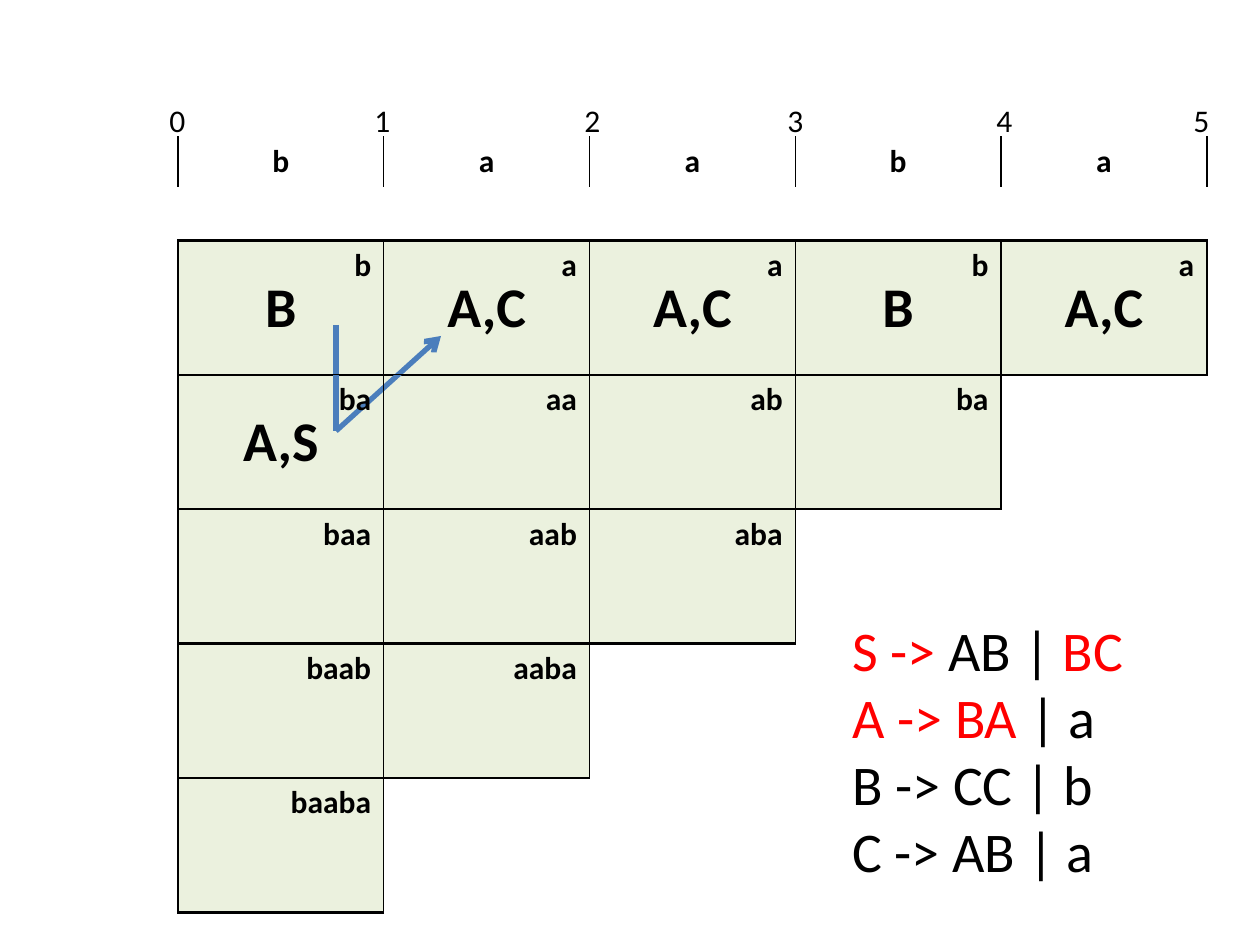
import pptx
import pptx.util
import pptx.dml.color
import pptx.enum.text
import pptx.enum.shapes
import pptx.oxml
import pptx.oxml.ns

ALIGN = pptx.enum.text.PP_ALIGN
ANCHOR = pptx.enum.text.MSO_ANCHOR
BLACK, RED, BLUE, GREEN, WHITE = "000000", "FF0000", "4B7EBC", "EBF1DE", "FFFFFF"
PLAIN = "{2D5ABB26-0587-4C30-8999-92F81FD0307C}"
SIZE = 5
WORD = "baaba"
FOUND = {(0, 0): "B", (0, 1): "A,C", (0, 2): "A,C", (0, 3): "B", (0, 4): "A,C", (1, 0): "A,S"}
STOPS = (205, 415, 618, 827, 1024)
RULES = (
    (("S ->", RED), (" AB | ", BLACK), ("BC", RED)),
    (("A -> BA", RED), (" | a", BLACK)),
    (("B -> CC | b", BLACK),),
    (("C -> AB | a", BLACK),),
)


def px(num):
    """Turn pixels into EMU."""
    return round(num * 914400 / 126)


def color(code):
    """Turn a hex string into a colour."""
    return pptx.dml.color.RGBColor.from_string(code)


def node(xml):
    """Parse one element in the drawing namespace."""
    return pptx.oxml.parse_xml(xml.replace(" ", f" {pptx.oxml.ns.nsdecls('a')} ", 1))


def style(item, form):
    """Set attributes from a dict of format values."""
    for name, value in form.items():
        setattr(item, name, value)


def write(para, text, size, code=BLACK, bold=False):
    """Add one formatted run to a paragraph."""
    run = para.add_run()
    run.text = text
    style(run.font, {"name": "Calibri", "size": pptx.util.Pt(size), "bold": bold})
    run.font.color.rgb = color(code)


def edge(cell, sides):
    """Draw the given sides of a cell in thin black and clear the rest."""
    solid = f'<a:solidFill><a:srgbClr val="{BLACK}"/></a:solidFill>'
    for spot, side in enumerate("LRTB"):
        ink = solid if side in sides else "<a:noFill/>"
        cell._tc.get_or_add_tcPr().insert(
            spot, node(f'<a:ln{side} w="12700">{ink}</a:ln{side}>'))


def grid(slide, box, rows):
    """Add an unstyled table with equal rows and columns."""
    left, top, width, height = map(px, box)
    frame = slide.shapes.add_table(rows, SIZE, left, top, width, height)
    table = frame.table
    style(table, {"first_row": False, "horz_banding": False})
    table._tbl.tblPr.find(pptx.oxml.ns.qn("a:tableStyleId")).text = PLAIN
    for col in table.columns:
        col.width = width // SIZE
    for row in table.rows:
        row.height = height // rows
    return table


def fill_cell(cell, text, size, align, anchor=ANCHOR.TOP):
    """Write bold text into a cell."""
    cell.vertical_anchor = anchor
    para = cell.text_frame.paragraphs[0]
    para.alignment = align
    write(para, text, size, bold=True)


def chart(slide, box, words, fill, size, align, anchor):
    """Build a triangular parse chart."""
    table = grid(slide, box, SIZE)
    for row in range(SIZE):
        for col in range(SIZE):
            cell = table.cell(row, col)
            cell.fill.background()
            if row + col < SIZE:
                edge(cell, "LRTB")
                if fill:
                    cell.fill.solid()
                    cell.fill.fore_color.rgb = color(fill)
            else:
                edge(cell, "LT" if row + col == SIZE else "")
            if (row, col) in words:
                fill_cell(cell, words[row, col], size, align, anchor)


def header(slide, box):
    """Show the letters of the word between upright ticks."""
    table = grid(slide, box, 1)
    for col, letter in enumerate(WORD):
        cell = table.cell(0, col)
        fill_cell(cell, letter, 18, ALIGN.CENTER)
        cell.fill.solid()
        cell.fill.fore_color.rgb = color(WHITE)
        edge(cell, "LR")


def text_box(slide, box):
    """Add a wrapped text box that grows with its text."""
    frame = slide.shapes.add_textbox(*map(px, box)).text_frame
    style(frame, {"word_wrap": True,
                  "auto_size": pptx.enum.text.MSO_AUTO_SIZE.SHAPE_TO_FIT_TEXT})
    return frame


def places(slide, box):
    """Number the ticks with tab stops."""
    para = text_box(slide, box).paragraphs[0]
    write(para, "\t".join(map(str, range(SIZE + 1))), 18)
    stops = "".join(f'<a:tab pos="{px(stop)}" algn="l"/>' for stop in STOPS)
    para._p.get_or_add_pPr().append(node(f"<a:tabLst >{stops}</a:tabLst>"))


def grammar(slide, box):
    """List the grammar rules with the used parts in red."""
    frame = text_box(slide, box)
    for num, rule in enumerate(RULES):
        para = frame.add_paragraph() if num else frame.paragraphs[0]
        for text, code in rule:
            write(para, text, 32, code)


def trace(slide, box):
    """Draw the path from the upper cell down and up to the next cell."""
    left, top, width, height = box
    low = (left, top + height)
    ends = (((left, top), low, False), (low, (left + width, top + 11), True))
    for start, end, head in ends:
        line = slide.shapes.add_connector(
            pptx.enum.shapes.MSO_CONNECTOR.STRAIGHT, *map(px, start + end))
        line.line.color.rgb = color(BLUE)
        line.line.width = pptx.util.Pt(3)
        if head:
            line.line._get_or_add_ln().append(node('<a:tailEnd type="arrow"/>'))
        line._element.spPr.append(node("<a:effectLst />"))


def main():
    """Build and save the slide."""
    deck = pptx.Presentation()
    style(deck, {"slide_width": px(1260), "slide_height": px(945)})
    slide = deck.slides.add_slide(deck.slide_layouts[6])
    spans = {(row, col): WORD[col:col + row + 1]
             for row in range(SIZE) for col in range(SIZE - row)}
    chart(slide, (178, 241, 1029, 672), FOUND, GREEN, 32, ALIGN.CENTER, ANCHOR.MIDDLE)
    trace(slide, (336, 325, 105, 106))
    grammar(slide, (840, 609, 368, 285))
    header(slide, (178, 136, 1029, 51))
    places(slide, (157, 95, 1071, 50))
    chart(slide, (178, 240, 1029, 672), spans, None, 18, ALIGN.RIGHT, ANCHOR.TOP)
    deck.save("out.pptx")


if __name__ == "__main__":
    main()
